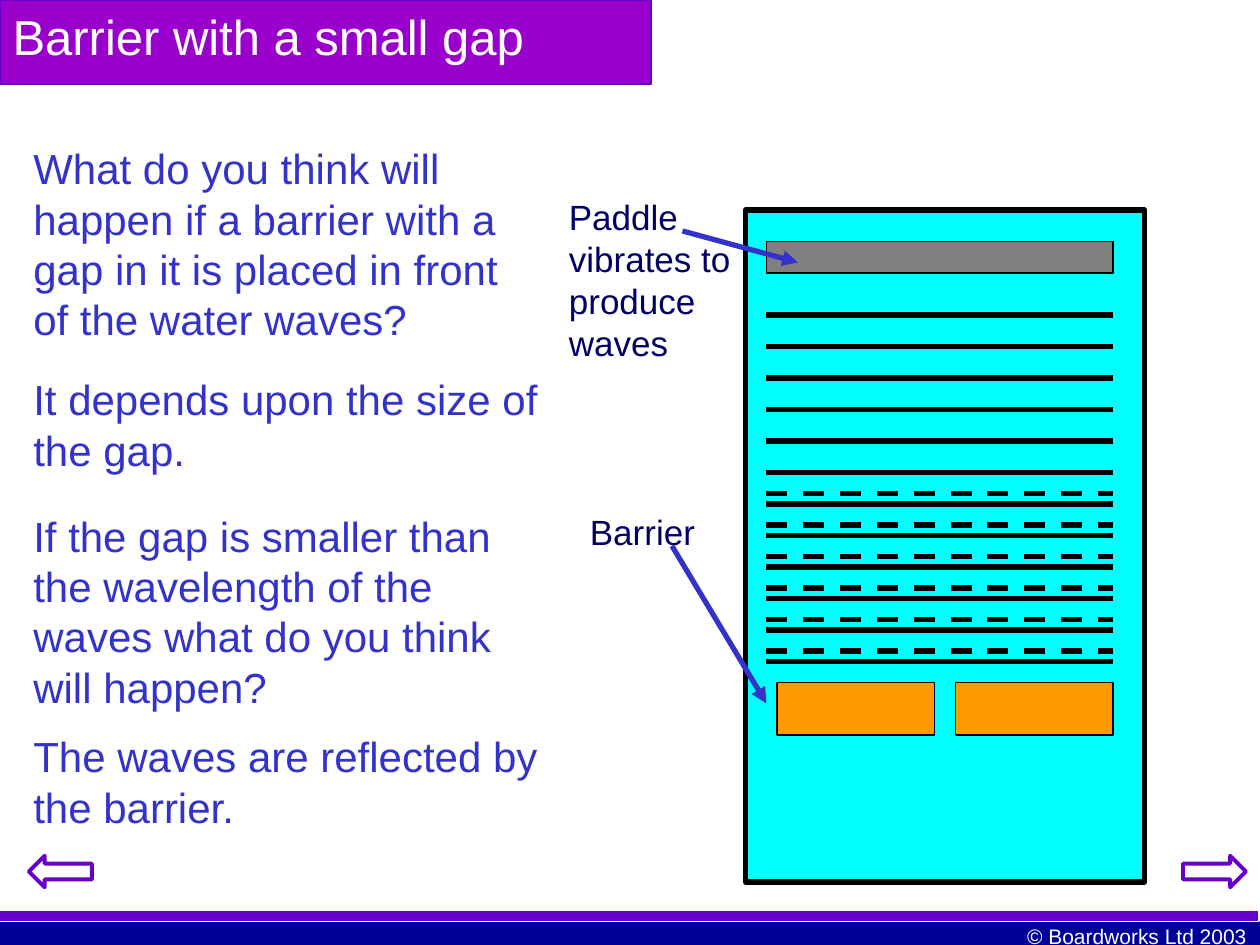
from lxml.etree import SubElement
from pptx import Presentation
from pptx.dml.color import RGBColor
from pptx.enum.dml import MSO_LINE
from pptx.enum.shapes import MSO_CONNECTOR, MSO_SHAPE
from pptx.enum.text import MSO_ANCHOR, MSO_AUTO_SIZE, PP_ALIGN
from pptx.oxml.ns import qn
from pptx.util import Pt

COLORS = {
    "white": "FFFFFF", "black": "000000", "navy": "000099", "violet": "6600CC",
    "purple": "9900CC", "blue": "3333CC", "label": "000066", "water": "00FFFF",
    "paddle": "808080", "barrier": "FF9900",
}
FONT = "Arial"
LINE_HEIGHT = 1.2

TITLE = "Barrier with a small gap"
COPYRIGHT = "© Boardworks Ltd 2003"
QUESTIONS = [
    ("What do you think will happen if a barrier with a gap in it is placed "
     "in front of the water waves?", (12, 78, 288, 122.4)),
    ("It depends upon the size of the gap.", (12, 210, 318, 64.8)),
    ("If the gap is smaller than the wavelength of the waves what do you "
     "think will happen?", (12, 288, 294, 122.4)),
    ("The waves are reflected by the barrier.", (12, 414, 318, 64.8)),
]
LABELS = [
    ("Paddle vibrates to produce waves", (318, 108, 120, 103.2), (390, 132), (456, 150)),
    ("Barrier", (330, 288, 108, 31.2), (384, 312), (438, 402)),
]

WAVE_LEFT, WAVE_RIGHT, WAVE_GAP = 438, 636, 18
INCIDENT_TOP, INCIDENT_COUNT = 180, 12
REFLECTED_TOP, REFLECTED_COUNT = 282, 6
BARRIER_TOP, BARRIER_WIDTH, BARRIER_HEIGHT = 390, 90, 30
BARRIER_LEFTS = (444, WAVE_RIGHT - BARRIER_WIDTH)


def rgb(name):
    return RGBColor.from_string(COLORS[name])


def paint(shape, fill, line=None, weight=0.75):
    shape.shadow.inherit = False
    shape.fill.solid()
    shape.fill.fore_color.rgb = rgb(fill)
    if line:
        shape.line.color.rgb = rgb(line)
        shape.line.width = Pt(weight)
    else:
        shape.line.fill.background()


def add_block(slide, box, fill, line=None, weight=0.75, kind=MSO_SHAPE.RECTANGLE):
    block = slide.shapes.add_shape(kind, *map(Pt, box))
    paint(block, fill, line, weight)
    return block


def write(frame, text, size, color, align=PP_ALIGN.LEFT):
    frame.word_wrap = True
    frame.vertical_anchor = MSO_ANCHOR.TOP
    paragraph = frame.paragraphs[0]
    paragraph.alignment = align
    paragraph.line_spacing = Pt(size * LINE_HEIGHT)
    paragraph.space_before = Pt(0)
    run = paragraph.add_run()
    run.text = text
    run.font.name = FONT
    run.font.size = Pt(size)
    run.font.color.rgb = rgb(color)


def add_text(slide, text, box, size, color, align=PP_ALIGN.LEFT):
    frame = slide.shapes.add_textbox(*map(Pt, box)).text_frame
    write(frame, text, size, color, align)
    frame.auto_size = MSO_AUTO_SIZE.SHAPE_TO_FIT_TEXT


def add_line(slide, start, end, color, dashed=False, arrow=False):
    line = slide.shapes.add_connector(MSO_CONNECTOR.STRAIGHT, *map(Pt, start + end))
    line.line.color.rgb = rgb(color)
    line.line.width = Pt(3)
    if dashed:
        line.line.dash_style = MSO_LINE.DASH
    properties = line.line._get_or_add_ln()
    if arrow:
        SubElement(properties, qn("a:tailEnd"), type="triangle")
    SubElement(properties.getparent(), qn("a:effectLst"))


def add_waves(slide, top, count, dashed=False):
    for index in range(count):
        y = top + index * WAVE_GAP
        add_line(slide, (WAVE_LEFT, y), (WAVE_RIGHT, y), "black", dashed)


def add_frame(slide):
    add_block(slide, (0, 526.5, 720, 13.5), "navy")
    add_block(slide, (-0.75, 520.5, 720, 6), "violet", "white")
    for left, turn in ((676, 0), (16.5, 180)):
        arrow = add_block(slide, (left, 489, 36, 18), "white", "violet", 2.25,
                          MSO_SHAPE.RIGHT_ARROW)
        arrow.rotation = turn
    add_text(slide, COPYRIGHT, (551.5, 524.25, 168, 21.6), 12, "white", PP_ALIGN.RIGHT)

    title = slide.shapes.title
    title.left, title.top, title.width, title.height = map(Pt, (0, 0, 372, 48))
    paint(title, "purple", "violet")
    write(title.text_frame, TITLE, 28, "white")
    title.text_frame.auto_size = MSO_AUTO_SIZE.NONE


def add_ripple_tank(slide):
    add_block(slide, (426, 120, 228, 384), "water", "black", 3)
    add_block(slide, (WAVE_LEFT, 138, WAVE_RIGHT - WAVE_LEFT, 18), "paddle", "black")
    add_waves(slide, INCIDENT_TOP, INCIDENT_COUNT)
    add_waves(slide, REFLECTED_TOP, REFLECTED_COUNT, dashed=True)
    for left in BARRIER_LEFTS:
        add_block(slide, (left, BARRIER_TOP, BARRIER_WIDTH, BARRIER_HEIGHT),
                  "barrier", "black")
    for text, box, start, end in LABELS:
        add_text(slide, text, box, 20, "label")
        add_line(slide, start, end, "blue", arrow=True)


def main():
    deck = Presentation()
    deck.slide_width, deck.slide_height = Pt(720), Pt(540)
    slide = deck.slides.add_slide(deck.slide_layouts[5])
    slide.background.fill.solid()
    slide.background.fill.fore_color.rgb = rgb("white")
    add_frame(slide)
    for text, box in QUESTIONS:
        add_text(slide, text, box, 24, "blue")
    add_ripple_tank(slide)
    deck.save("out.pptx")


if __name__ == "__main__":
    main()
